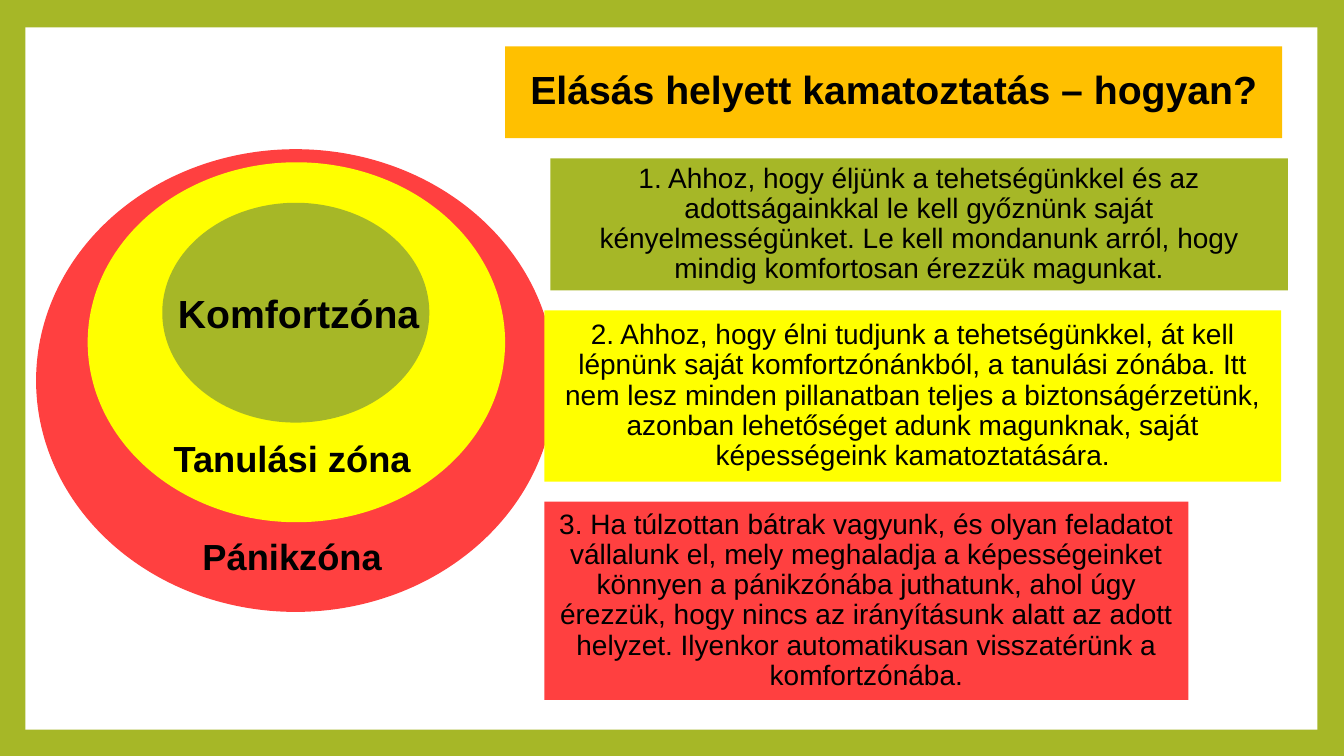
from lxml import etree
from pptx import Presentation
from pptx.dml.color import RGBColor
from pptx.enum.shapes import MSO_SHAPE
from pptx.enum.text import MSO_ANCHOR, PP_ALIGN
from pptx.oxml.ns import qn
from pptx.util import Cm, Pt

RECT, OVAL = MSO_SHAPE.RECTANGLE, MSO_SHAPE.OVAL
MIDDLE, TOP = MSO_ANCHOR.MIDDLE, MSO_ANCHOR.TOP
CENTER = PP_ALIGN.CENTER
GREEN, YELLOW, RED = "A6B727", "FFFF00", "FF4040"
ORANGE, WHITE, BLACK = "FFC000", "FFFFFF", "000000"

# Fill, opacity in percent, and box relative to the diagram
ZONES = [
    ("FF0000", 75, (0, 0, 13.08, 11.66)),
    (YELLOW, 100, (1.3, 0.33, 10.52, 9.07)),
    (GREEN, 100, (3.18, 1.35, 6.73, 5.54)),
]
# Text, size, line spacing, and box relative to the diagram
ZONE_LABELS = [
    ("Pánikzóna", 25.9, 0.8, (1.5, 9.8, 9.78, 1.19)),
    ("Tanulási zóna", 25.9, 0.8, (1.5, 7.31, 9.78, 1.19)),
    ("Komfortzóna", 28, 0.9, (1.66, 3.53, 9.78, 1.35)),
]
# Fill, left offset, width, height, text
STEPS = [
    (GREEN, 0.15, 18.59, 3.33,
     "1. Ahhoz, hogy éljünk a tehetségünkkel és az adottságainkkal le kell "
     "győznünk saját kényelmességünket. Le kell mondanunk arról, hogy mindig "
     "komfortosan érezzük magunkat."),
    (YELLOW, 0, 18.57, 4.32,
     "2. Ahhoz, hogy élni tudjunk a tehetségünkkel, át kell lépnünk saját "
     "komfortzónánkból, a tanulási zónába. Itt nem lesz minden pillanatban "
     "teljes a biztonságérzetünk, azonban lehetőséget adunk magunknak, saját "
     "képességeink kamatoztatására."),
    (RED, 0, 16.23, 5,
     "3. Ha túlzottan bátrak vagyunk, és olyan feladatot vállalunk el, mely "
     "meghaladja a képességeinket könnyen a pánikzónába juthatunk, ahol úgy "
     "érezzük, hogy nincs az irányításunk alatt az adott helyzet. Ilyenkor "
     "automatikusan visszatérünk a komfortzónába."),
]
STEP_GAP = 0.5


def set_fill(fill, color):
    fill.solid()
    fill.fore_color.rgb = RGBColor.from_string(color)


def add_shape(s, kind, box, color, opacity=100):
    sp = s.shapes.add_shape(kind, *map(Cm, box))
    sp.shadow.inherit = False
    sp.line.fill.background()
    set_fill(sp.fill, color)
    if opacity < 100:
        clr = sp.fill._xPr.find(".//" + qn("a:srgbClr"))
        etree.SubElement(clr, qn("a:alpha"), val=str(opacity * 1000))
    return sp


def write(sp, text, size=20, bold=False, spacing=0.9, anchor=MIDDLE, indent=0):
    tf = sp.text_frame
    tf.word_wrap = True
    tf.vertical_anchor = anchor
    p = tf.paragraphs[0]
    p.alignment = CENTER
    p.line_spacing = spacing
    if indent:
        p._p.get_or_add_pPr().set("marL", str(Cm(indent)))
    r = p.add_run()
    r.text = text
    r.font.name = "Arial"
    r.font.size = Pt(size)
    r.font.bold = bold
    r.font.color.rgb = RGBColor.from_string(BLACK)


def add_frame(s, box):
    set_fill(s.background.fill, GREEN)
    add_shape(s, RECT, box, WHITE)


def add_title(s, box):
    sp = add_shape(s, RECT, box, ORANGE)
    write(sp, "Elásás helyett kamatoztatás – hogyan?", size=28, bold=True)


def add_zones(s, left, top):
    for color, opacity, (x, y, w, h) in ZONES:
        add_shape(s, OVAL, (left + x, top + y, w, h), color, opacity)
    for text, size, spacing, (x, y, w, h) in ZONE_LABELS:
        sp = s.shapes.add_textbox(*map(Cm, (left + x, top + y, w, h)))
        write(sp, text, size=size, bold=True, spacing=spacing, anchor=TOP,
              indent=0.13)


def add_steps(s, left, top):
    for color, x, w, h, text in STEPS:
        write(add_shape(s, RECT, (left + x, top, w, h), color), text)
        top += h + STEP_GAP


def main():
    prs = Presentation()
    prs.slide_width, prs.slide_height = Cm(33.87), Cm(19.05)
    s = prs.slides.add_slide(prs.slide_layouts[6])
    add_frame(s, (0.64, 0.69, 32.56, 17.7))
    add_title(s, (12.73, 1.17, 19.58, 2.31))
    add_zones(s, 0.91, 3.76)
    add_steps(s, 13.72, 3.99)
    prs.save("out.pptx")


if __name__ == "__main__":
    main()
